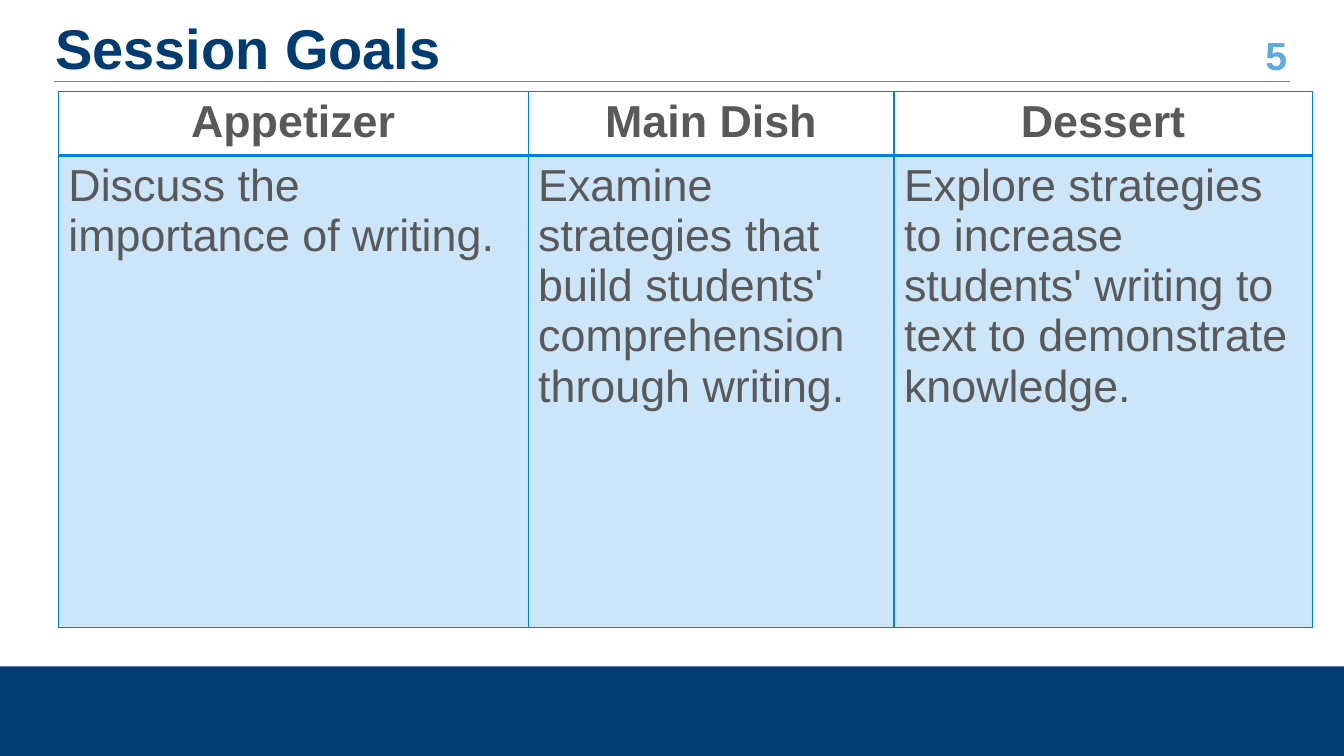
from lxml.etree import SubElement
from pptx import Presentation
from pptx.dml.color import RGBColor
from pptx.enum.shapes import MSO_CONNECTOR as CONNECTOR, MSO_SHAPE as SHAPE
from pptx.enum.text import MSO_ANCHOR as ANCHOR, PP_ALIGN as ALIGN
from pptx.oxml.ns import qn
from pptx.util import Cm, Pt

COLORS = {
    "navy": "003B71",
    "blue": "007FDC",
    "sky": "5FAADE",
    "text": "595959",
    "rule": "808080",
}
GOALS = [
    ("Appetizer", 11.84, "Discuss the importance of writing."),
    ("Main Dish", 9.22, "Examine strategies that build students' comprehension through writing."),
    ("Dessert", 10.54, "Explore strategies to increase students' writing to text to demonstrate knowledge."),
]
ROW_HEIGHTS = [1.5, 11.89]


def add_text(text_frame, text, size, color, bold, align):
    paragraph = text_frame.paragraphs[0]
    paragraph.alignment = align
    run = paragraph.add_run()
    run.text = text
    run.font.name = "Arial"
    run.font.size = Pt(size)
    run.font.bold = bold
    run.font.color.rgb = RGBColor.from_string(COLORS[color])
    return paragraph


def add_border(cell, side, width):
    line = SubElement(cell._tc.get_or_add_tcPr(), qn(f"a:ln{side}"), w=str(Pt(width)))
    fill = SubElement(line, qn("a:solidFill"))
    SubElement(fill, qn("a:srgbClr"), val=COLORS["blue"])


presentation = Presentation()
presentation.slide_width = Cm(33.87)
presentation.slide_height = Cm(19.05)
slide = presentation.slides.add_slide(presentation.slide_layouts[6])

footer = slide.shapes.add_shape(SHAPE.RECTANGLE, 0, Cm(16.79), Cm(33.87), Cm(2.26))
footer.shadow.inherit = False
footer.fill.solid()
footer.fill.fore_color.rgb = RGBColor.from_string(COLORS["navy"])
footer.line.fill.background()

for text, left, width, top, size, color, align, spacing in [
    ("5", 30.66, 2.03, 0.84, 28, "sky", ALIGN.RIGHT, 1.0),
    ("Session Goals", 1.14, 29.46, 0.76, 40, "navy", ALIGN.LEFT, 0.9),
]:
    box = slide.shapes.add_textbox(Cm(left), Cm(top), Cm(width), Cm(1.07))
    box.text_frame.word_wrap = True
    box.text_frame.vertical_anchor = ANCHOR.MIDDLE
    paragraph = add_text(box.text_frame, text, size, color, True, align)
    paragraph.line_spacing = spacing

rule = slide.shapes.add_connector(CONNECTOR.STRAIGHT, Cm(32.51), Cm(2.04), Cm(1.37), Cm(2.04))
rule.line.color.rgb = RGBColor.from_string(COLORS["rule"])
rule.line.width = Pt(0.5)
SubElement(rule._element.spPr, qn("a:effectLst"))

table_width = sum(width for _, width, _ in GOALS)
table = slide.shapes.add_table(
    2, len(GOALS), Cm(1.47), Cm(2.31), Cm(table_width), Cm(sum(ROW_HEIGHTS))
).table
table.first_row = False
table.horz_banding = False
for row, height in zip(table.rows, ROW_HEIGHTS):
    row.height = Cm(height)

for index, (heading, width, goal) in enumerate(GOALS):
    table.columns[index].width = Cm(width)
    header, body = table.cell(0, index), table.cell(1, index)
    for cell, top, bottom in [(header, 1, 2), (body, 2, 1)]:
        for side, thickness in [("L", 1), ("R", 1), ("T", top), ("B", bottom)]:
            add_border(cell, side, thickness)
    header.fill.background()
    body.fill.solid()
    body.fill.fore_color.rgb = RGBColor.from_string(COLORS["blue"])
    color = body._tc.tcPr.find(qn("a:solidFill")).find(qn("a:srgbClr"))
    SubElement(color, qn("a:alpha"), val="20000")
    add_text(header.text_frame, heading, 32, "text", True, ALIGN.CENTER)
    add_text(body.text_frame, goal, 32, "text", False, ALIGN.LEFT)

presentation.save("out.pptx")
